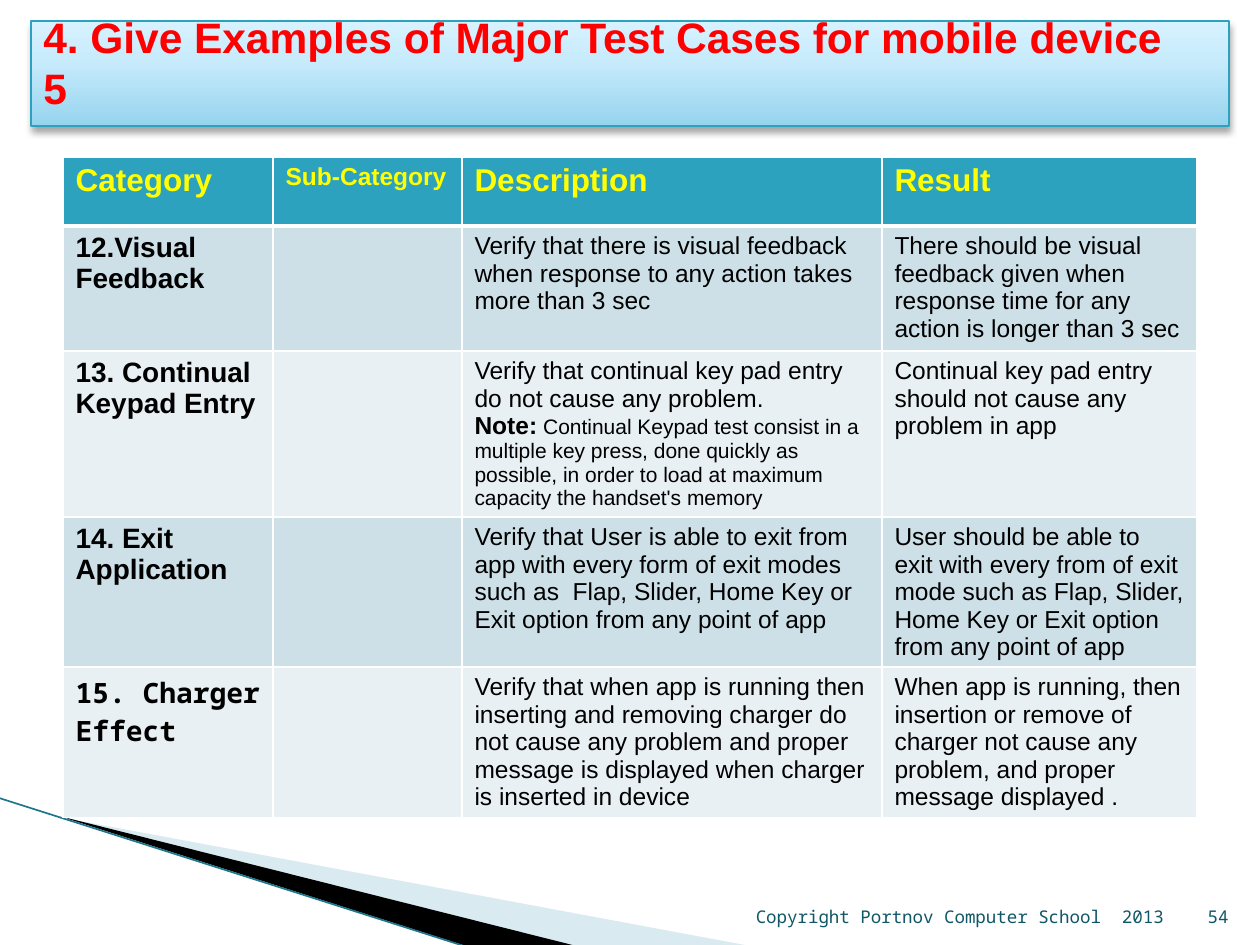
from copy import deepcopy

from lxml import etree
from pptx import Presentation, util as u
from pptx.dml.color import RGBColor
from pptx.enum import shapes, text
from pptx.oxml.ns import qn

PX = 914400 // 126
SANS, MONO = "Arial", "Noto Sans Mono"
WHITE = RGBColor(0xFF, 0xFF, 0xFF)
BLACK = RGBColor(0, 0, 0)
RED = RGBColor(0xFF, 0, 0)
YELLOW = RGBColor(0xFF, 0xFF, 0)
TEAL = RGBColor(0x2D, 0xA2, 0xBF)
DARK_TEAL = RGBColor(0x1E, 0x76, 0x8C)
FOOTER = RGBColor(0x10, 0x57, 0x66)
PALE_BLUE = RGBColor(0xA0, 0xCB, 0xDC)
BANDS = [RGBColor(0xCD, 0xE0, 0xE8), RGBColor(0xE8, 0xF0, 0xF4)]
GRADIENT = [(0, RGBColor(0x96, 0xD4, 0xEE)), (0.65, RGBColor(0xC9, 0xEC, 0xFC)),
            (1, RGBColor(0xD7, 0xF2, 0xFF))]


def style(span, size, color, bold=False, name=SANS):
    span.font.size = u.Pt(size)
    span.font.color.rgb = color
    span.font.bold = bold
    span.font.name = name


def add_border(cell, side, points):
    line = etree.SubElement(cell._tc.get_or_add_tcPr(), qn("a:" + side), w=str(u.Pt(points)))
    fill = etree.SubElement(line, qn("a:solidFill"))
    etree.SubElement(fill, qn("a:srgbClr"), val=str(WHITE))


deck = Presentation()
deck.slide_width, deck.slide_height = 1260 * PX, 945 * PX
page = deck.slides.add_slide(deck.slide_layouts[6])

# Corner wedges and the line along them
wedges = [([(69, 819), (750, 946), (575, 946)], PALE_BLUE, 40),
          ([(67, 818), (576, 946), (469, 947), (68, 819)], BLACK, 100)]
for points, color, opacity in wedges:
    builder = page.shapes.build_freeform(*points[0], scale=PX)
    builder.add_line_segments(points[1:], close=True)
    wedge = builder.convert_to_shape()
    wedge.shadow.inherit = False
    wedge.fill.solid()
    wedge.fill.fore_color.rgb = color
    wedge.line.fill.background()
    if opacity < 100:
        tint = wedge._element.spPr.find(qn("a:solidFill"))[0]
        etree.SubElement(tint, qn("a:alpha"), val=str(opacity * 1000))

edge = page.shapes.add_connector(shapes.MSO_CONNECTOR.STRAIGHT, -1 * PX, 798 * PX, 467 * PX, 947 * PX)
edge.line.color.rgb = DARK_TEAL
edge.line.width = u.Pt(0.95)
etree.SubElement(edge._element.spPr, qn("a:effectLst"))

# Test case table: category, description paragraphs, result
header = [("Category", 18), ("Sub-Category", 14), ("Description", 18), ("Result", 18)]
cases = [
    ("12.Visual Feedback", SANS,
     [[("Verify that there is visual feedback when response to any action takes more than 3 sec", 14, False)]],
     "There should be visual feedback given when response time for any action is longer than 3 sec"),
    ("13. Continual Keypad Entry", SANS,
     [[("Verify that continual key pad entry do not cause any problem.", 14, False)],
      [("Note:", 14, True),
       (" Continual Keypad test consist in a multiple key press, done quickly as possible, "
        "in order to load at maximum capacity the handset's memory", 12, False)]],
     "Continual key pad entry should not cause any problem in app"),
    ("14. Exit Application", SANS,
     [[("Verify that User is able to exit from app with every form of exit modes such as  Flap, "
        "Slider, Home Key or Exit option from any point of app", 14, False)]],
     "User should be able to exit with every from of exit mode such as Flap, Slider, "
     "Home Key or Exit option from any point of app"),
    ("15. Charger Effect", MONO,
     [[("Verify that when app is running then inserting and removing charger do not cause any "
        "problem and proper message is displayed when charger is inserted in device", 14, False)]],
     "When app is running, then insertion or remove of  charger not cause any problem, "
     "and proper message displayed ."),
]
widths = [210, 189, 420, 315]
heights = [69, 125, 166, 150, 150]
table = page.shapes.add_table(len(heights), len(widths), 63 * PX, 157 * PX,
                              sum(widths) * PX, sum(heights) * PX).table
for column, width in zip(table.columns, widths):
    column.width = width * PX
for row, height in zip(table.rows, heights):
    row.height = height * PX

for col, (label, size) in enumerate(header):
    cell = table.cell(0, col)
    cell.text_frame.text = label
    style(cell.text_frame.paragraphs[0].runs[0], size, YELLOW, True)

for row, (category, face, description, result) in enumerate(cases, 1):
    for col, paragraphs in [(0, [[(category, 16, True)]]), (2, description), (3, [[(result, 14, False)]])]:
        frame = table.cell(row, col).text_frame
        for index, spans in enumerate(paragraphs):
            para = frame.add_paragraph() if index else frame.paragraphs[0]
            for words, size, bold in spans:
                span = para.add_run()
                span.text = words
                style(span, size, BLACK, bold, face if col == 0 else SANS)

for row in range(len(heights)):
    for col in range(len(widths)):
        cell = table.cell(row, col)
        for side in ("lnL", "lnR", "lnT", "lnB"):
            thick = (row, side) in [(0, "lnB"), (1, "lnT")]
            add_border(cell, side, 3 if thick else 1)
        cell.fill.solid()
        cell.fill.fore_color.rgb = BANDS[(row - 1) % 2] if row else TEAL

# Footer and page number
for words, left, width in [("Copyright Portnov Computer School  2013", 604, 572), ("54", 1176, 65)]:
    box = page.shapes.add_textbox(left * PX, 883 * PX, width * PX, 50 * PX)
    frame = box.text_frame
    frame.word_wrap = True
    frame.vertical_anchor = text.MSO_ANCHOR.BOTTOM
    frame.text = words
    frame.paragraphs[0].alignment = text.PP_ALIGN.RIGHT
    style(frame.paragraphs[0].runs[0], 10, FOOTER, name=MONO)

# Title bar with gradient and soft shadow
title = page.shapes.add_shape(shapes.MSO_SHAPE.RECTANGLE, 31 * PX, 21 * PX, 1198 * PX, 105 * PX)
title.line.color.rgb = TEAL
title.line.width = u.Pt(0.75)
title.fill.gradient()
title.fill.gradient_angle = 90
stop_list = title._element.spPr.find(qn("a:gradFill")).find(qn("a:gsLst"))
stop_list.append(deepcopy(stop_list[-1]))
for stop, (position, color) in zip(title.fill.gradient_stops, GRADIENT):
    stop.position = position
    stop.color.rgb = color
title.shadow.inherit = False
effects = title._element.spPr.find(qn("a:effectLst"))
shadow = etree.SubElement(effects, qn("a:outerShdw"), blurRad=str(u.Pt(4)), dist=str(u.Pt(3)),
                          dir="5400000", rotWithShape="0")
shade = etree.SubElement(shadow, qn("a:srgbClr"), val=str(BLACK))
etree.SubElement(shade, qn("a:alpha"), val="35000")

frame = title.text_frame
frame.word_wrap = True
frame.vertical_anchor = text.MSO_ANCHOR.MIDDLE
frame.margin_top, frame.margin_bottom = 0, 24 * PX
frame.text = "4. Give Examples of Major Test Cases for mobile device\v5"
frame.paragraphs[0].alignment = text.PP_ALIGN.LEFT
for span in frame.paragraphs[0].runs:
    style(span, 24.3, RED, True)

deck.save("out.pptx")
